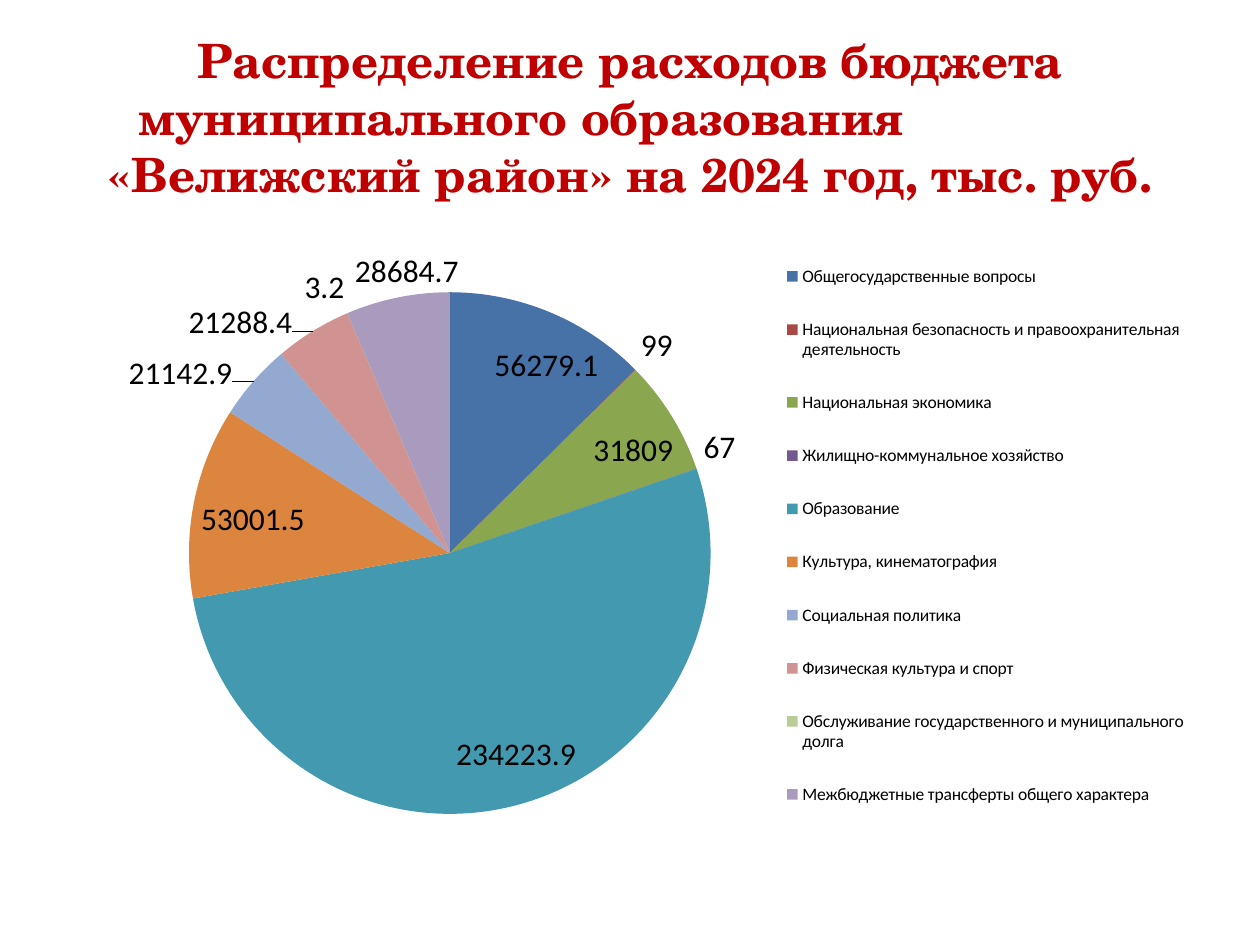
from lxml import etree
from pptx import Presentation
from pptx import util as u
from pptx.chart.data import CategoryChartData
from pptx.dml.color import RGBColor
from pptx.enum import chart as ch, text
from pptx.oxml.ns import qn

RED = RGBColor(0xC0, 0x00, 0x00)
BLACK = RGBColor(0x00, 0x00, 0x00)
SLICE_COLORS = [RGBColor.from_string(c) for c in (
    "4672A8", "AB4744", "8AA64F", "725990", "4299B0",
    "DC853E", "93A9CF", "D19392", "B9CD96", "A99BBD")]
CHART_WIDTH, CHART_HEIGHT = 9, 4.95

TITLE_LINES = [
    ("Распределение расходов бюджета", 0),
    ("муниципального образования", 1.73),
    ("«Велижский район» на 2024 год, тыс. руб.", 0),
]
EXPENSES = [
    ("Общегосударственные вопросы", 56279.1),
    ("Национальная безопасность и правоохранительная деятельность", 99),
    ("Национальная экономика", 31809),
    ("Жилищно-коммунальное хозяйство", 67),
    ("Образование", 234223.9),
    ("Культура, кинематография", 53001.5),
    ("Социальная политика", 21142.9),
    ("Физическая культура и спорт", 21288.4),
    ("Обслуживание государственного и муниципального долга", 3.2),
    ("Межбюджетные трансферты общего характера", 28684.7),
]


def set_font(font, name, size, color, bold=False):
    font.name = name
    font.size = u.Pt(size)
    font.bold = bold
    font.color.rgb = color


def fill_title(sp):
    sp.left, sp.top = u.Inches(0.5), u.Inches(0.3)
    sp.width, sp.height = u.Inches(9), u.Inches(1.25)
    tf = sp.text_frame
    tf.word_wrap = True
    tf.auto_size = text.MSO_AUTO_SIZE.NONE
    tf.vertical_anchor = text.MSO_ANCHOR.MIDDLE
    for i, (line, right_indent) in enumerate(TITLE_LINES):
        p = tf.paragraphs[0] if i == 0 else tf.add_paragraph()
        p.alignment = text.PP_ALIGN.CENTER
        p.space_before = u.Pt(0)
        p._p.get_or_add_pPr().set("marR", str(u.Inches(right_indent)))
        r = p.add_run()
        r.text = line
        set_font(r.font, "TeX Gyre Schola", 27, RED, True)


def set_layout(parent, after, x, y, w, h, inner=False):
    for old in parent.findall(qn("c:layout")):
        parent.remove(old)
    layout = etree.Element(qn("c:layout"))
    manual = etree.SubElement(layout, qn("c:manualLayout"))
    values = [("layoutTarget", "inner")] if inner else []
    values += [("xMode", "edge"), ("yMode", "edge"),
               ("x", x / CHART_WIDTH), ("y", y / CHART_HEIGHT),
               ("w", w / CHART_WIDTH), ("h", h / CHART_HEIGHT)]
    for tag, value in values:
        etree.SubElement(manual, qn(f"c:{tag}")).set("val", str(value))
    if after is None:
        parent.insert(0, layout)
    else:
        after.addnext(layout)


def add_expense_pie(s):
    data = CategoryChartData()
    data.categories = [name for name, _ in EXPENSES]
    data.add_series("Series 1", [value for _, value in EXPENSES])
    chart = s.shapes.add_chart(
        ch.XL_CHART_TYPE.PIE, u.Inches(0.5), u.Inches(1.75),
        u.Inches(CHART_WIDTH), u.Inches(CHART_HEIGHT), data).chart
    chart.has_title = False
    set_font(chart.font, "Calibri", 18, BLACK)

    plot = chart.plots[0]
    plot.vary_by_categories = True
    for i, color in enumerate(SLICE_COLORS):
        fill = plot.series[0].points[i].format.fill
        fill.solid()
        fill.fore_color.rgb = color

    plot.has_data_labels = True
    labels = plot.data_labels
    labels.show_value = True
    labels.show_percentage = False
    labels.number_format = "General"
    labels.number_format_is_linked = False
    labels.position = ch.XL_LABEL_POSITION.BEST_FIT
    set_font(labels.font, "Calibri", 18, BLACK)

    chart.has_legend = True
    legend = chart.legend
    legend.position = ch.XL_LEGEND_POSITION.RIGHT
    legend.include_in_layout = False
    set_font(legend.font, "Calibri", 10, BLACK)

    plot_area = chart._chartSpace.chart.plotArea
    set_layout(plot_area, None, 1, 0.57, 4.14, 4.14, inner=True)
    legend_position = legend._element.find(qn("c:legendPos"))
    set_layout(legend._element, legend_position, 5.7, 0.1, 3.24, 4.8)


def main():
    prs = Presentation()
    prs.slide_width, prs.slide_height = u.Inches(10), u.Inches(7.5)
    s = prs.slides.add_slide(prs.slide_layouts[5])
    fill_title(s.shapes.title)
    add_expense_pie(s)
    prs.save("out.pptx")


if __name__ == "__main__":
    main()
